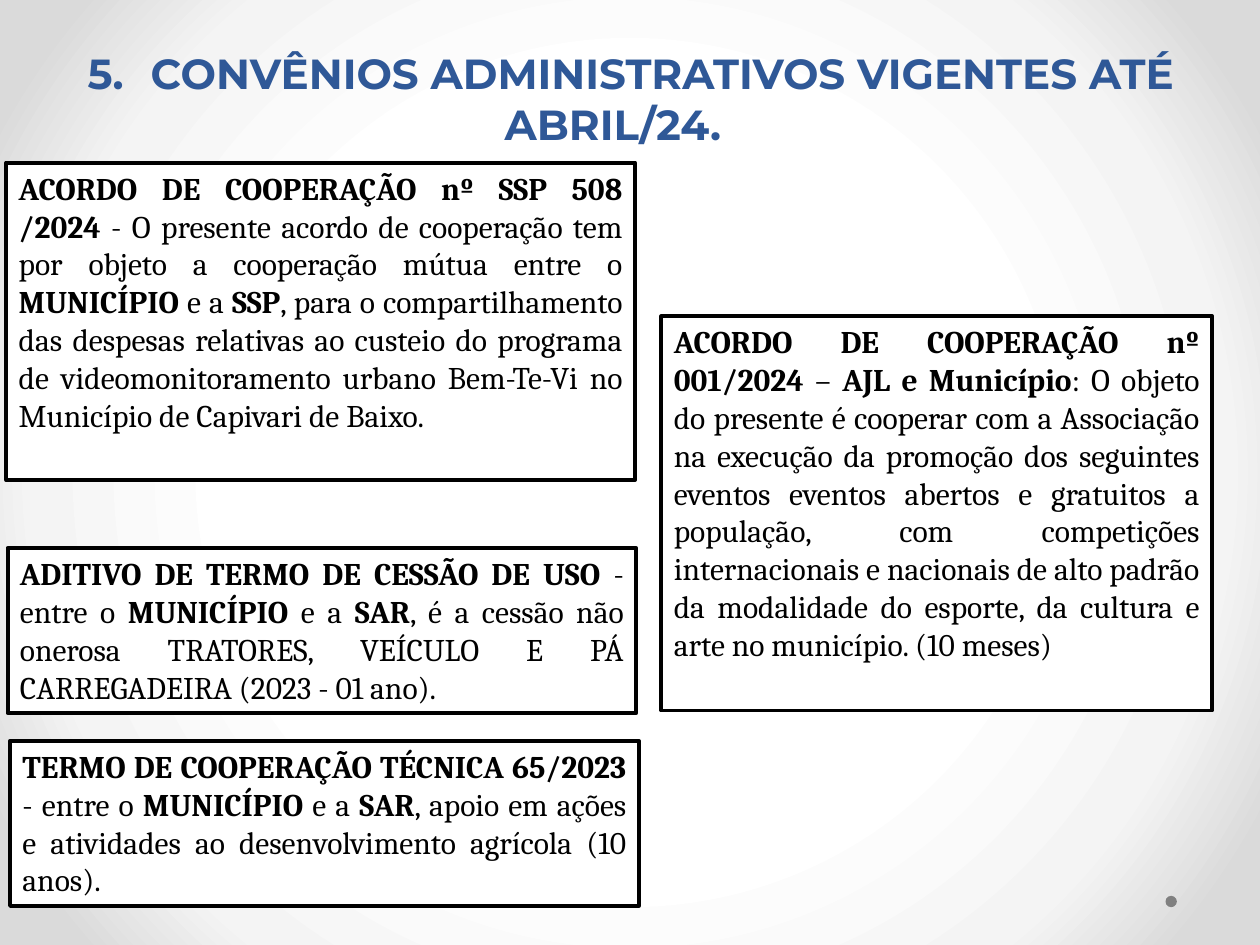
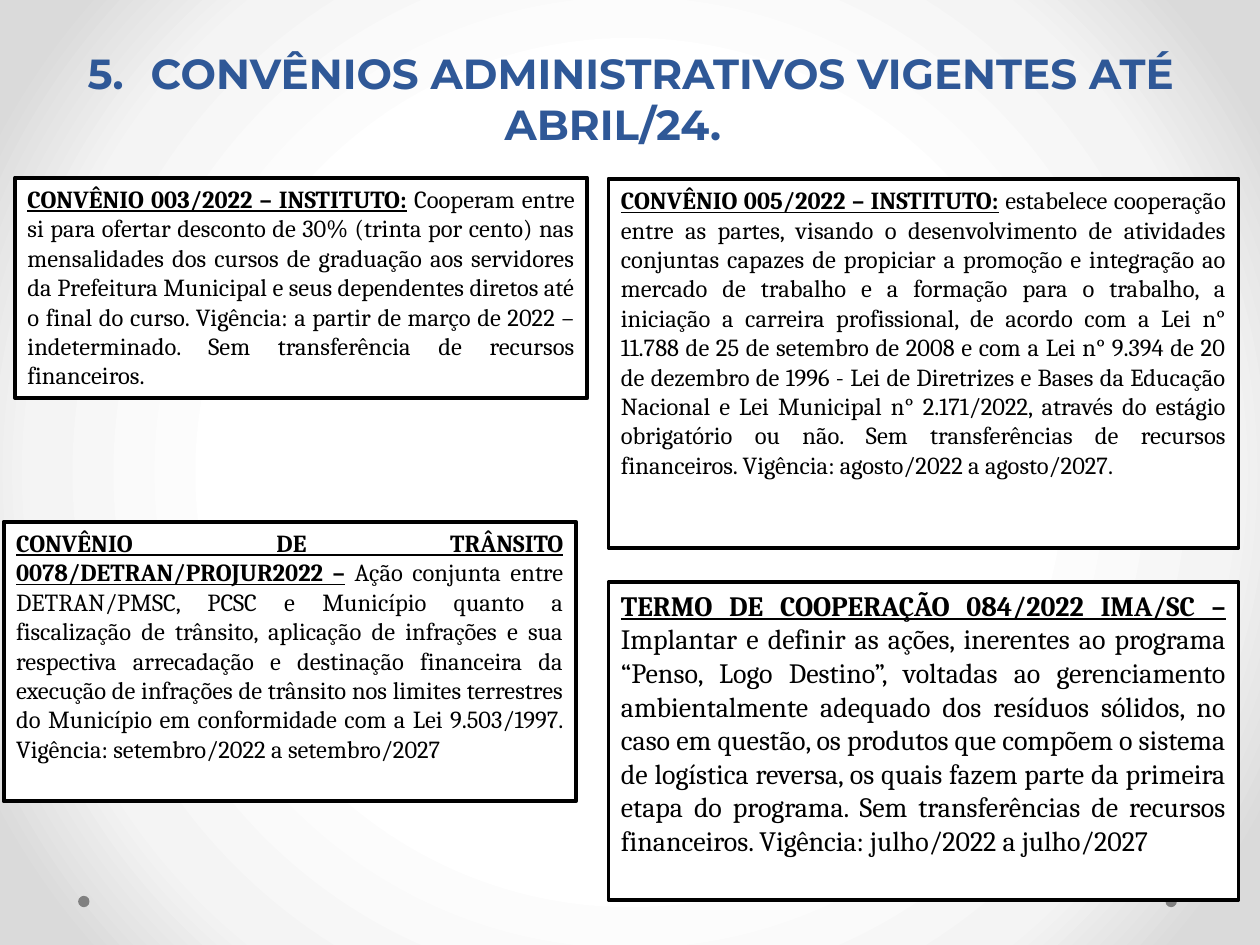
"""Build two slides listing the administrative agreements in force."""
from dataclasses import dataclass

from lxml import etree
from pptx import Presentation
from pptx.dml.color import RGBColor
from pptx.enum.shapes import MSO_SHAPE as Shape
from pptx.enum.text import MSO_ANCHOR as Anchor, PP_ALIGN as Align
from pptx.oxml import parse_xml
from pptx.oxml.ns import nsdecls, qn
from pptx.util import Pt

EMU_PER_PX = 9144
PAGE_WIDTH, PAGE_HEIGHT = 1000, 750
BLANK_LAYOUT = 6

BLACK, WHITE, TITLE_BLUE, DOT_GREY = "000000", "FFFFFF", "2F5897", "808080"
BACKDROP_STOPS = ((50, "FFFFFF"), (76, "F4F4F4"), (92, "DADADA"))
TITLE_FONT, BODY_FONT = "Montserrat", "Cambria"

TITLE = "5.\tCONVÊNIOS ADMINISTRATIVOS VIGENTES ATÉ ABRIL/24.\t"
DOT_SIZE, DOT_TOP = 9, 711
LEFT_DOT, RIGHT_DOT = 62, 925


@dataclass(frozen=True)
class Agreement:
    """A framed note whose spans alternate between bold and regular."""

    left: int
    top: int
    width: int
    height: int
    spans: tuple[str, ...]
    size: int = 18
    underlined: bool = False


@dataclass(frozen=True)
class Page:
    """The footer dots and agreements of one slide."""

    dots: tuple[int, ...]
    agreements: tuple[Agreement, ...]


PAGES = (
    Page((RIGHT_DOT,), (
        Agreement(5, 129, 499, 252, (
            "ACORDO DE COOPERAÇÃO nº SSP 508 /2024 ",
            "- O presente acordo de cooperação tem por objeto a cooperação "
            "mútua entre o ",
            "MUNICÍPIO",
            " e a ",
            "SSP",
            ", para o compartilhamento das despesas relativas ao custeio do "
            "programa de videomonitoramento urbano Bem-Te-Vi no Município de "
            "Capivari de Baixo.",
        )),
        Agreement(525, 251, 437, 313, (
            "ACORDO DE COOPERAÇÃO nº 001/2024 ",
            "– ",
            "AJL e Município",
            ": O objeto do presente é cooperar com a Associação na execução "
            "da promoção dos seguintes eventos eventos abertos e gratuitos a "
            "população, com competições internacionais e nacionais de alto "
            "padrão da modalidade do esporte, da cultura e arte no "
            "município. (10 meses)",
        )),
        Agreement(6, 435, 499, 131, (
            "ADITIVO DE TERMO DE CESSÃO DE USO ",
            "- entre o ",
            "MUNICÍPIO",
            " e a ",
            "SAR",
            ", é a cessão não onerosa TRATORES, VEÍCULO E PÁ CARREGADEIRA "
            "(2023 - 01 ano).",
        )),
        Agreement(8, 588, 499, 131, (
            "TERMO DE COOPERAÇÃO TÉCNICA 65/2023 ",
            "- entre o ",
            "MUNICÍPIO",
            " e a ",
            "SAR",
            ", apoio em ações e atividades ao desenvolvimento agrícola "
            "(10 anos).",
        )),
    )),
    Page((LEFT_DOT, RIGHT_DOT), (
        Agreement(3, 414, 454, 222, (
            "CONVÊNIO DE TRÂNSITO 0078/DETRAN/PROJUR2022 –",
            " Ação conjunta entre DETRAN/PMSC, PCSC e Município quanto a "
            "fiscalização de trânsito, aplicação de infrações e sua "
            "respectiva arrecadação e destinação financeira da execução de "
            "infrações de trânsito nos limites terrestres do Município em "
            "conformidade com a Lei 9.503/1997. Vigência: setembro/2022 a "
            "setembro/2027",
        ), 14, True),
        Agreement(12, 141, 454, 175, (
            "CONVÊNIO 003/2022 – INSTITUTO:",
            " Cooperam entre si para ofertar desconto de 30% (trinta por "
            "cento) nas mensalidades dos cursos de graduação aos servidores "
            "da Prefeitura Municipal e seus dependentes diretos até o final "
            "do curso. Vigência: a partir de março de 2022 – indeterminado. "
            "Sem transferência de recursos financeiros.",
        ), 14, True),
        Agreement(483, 142, 500, 293, (
            "CONVÊNIO 005/2022 – INSTITUTO:",
            " estabelece cooperação entre as partes, visando o "
            "desenvolvimento de atividades conjuntas capazes de propiciar a "
            "promoção e integração ao mercado de trabalho e a formação para "
            "o trabalho, a iniciação a carreira profissional, de acordo com "
            "a Lei n° 11.788 de 25 de setembro de 2008 e com a Lei n° 9.394 "
            "de 20 de dezembro de 1996 - Lei de Diretrizes e Bases da "
            "Educação Nacional e Lei Municipal n° 2.171/2022, através do "
            "estágio obrigatório ou não. Sem transferências de recursos "
            "financeiros. Vigência: agosto/2022 a agosto/2027.",
        ), 14, True),
        Agreement(483, 462, 500, 252, (
            "TERMO DE COOPERAÇÃO 084/2022 IMA/SC – ",
            "Implantar e definir as ações, inerentes ao programa “Penso, "
            "Logo Destino”, voltadas ao gerenciamento ambientalmente "
            "adequado dos resíduos sólidos, no caso em questão, os produtos "
            "que compõem o sistema de logística reversa, os quais fazem "
            "parte da primeira etapa do programa. Sem transferências de "
            "recursos financeiros. Vigência: julho/2022 a julho/2027",
        ), 16, True),
    )),
)


def px(*lengths: int) -> list[int]:
    """Turn px lengths into EMU."""
    return [length * EMU_PER_PX for length in lengths]


def colour(code: str) -> RGBColor:
    """Turn a hex string into a colour."""
    return RGBColor.from_string(code)


def paint_backdrop(master) -> None:
    """Give the slide master its radial gradient background."""
    fill = master.background.fill
    fill.solid()
    fill.fore_color.rgb = colour(WHITE)
    properties = master.element.find(".//" + qn("p:bgPr"))
    gradient = parse_xml(
        f'<a:gradFill {nsdecls("a")} rotWithShape="1"><a:gsLst/>'
        '<a:path path="circle"><a:fillToRect l="50000" t="50000" '
        'r="50000" b="50000"/></a:path></a:gradFill>'
    )
    for percent, code in BACKDROP_STOPS:
        stop = etree.SubElement(gradient[0], qn("a:gs"), pos=str(percent * 1000))
        etree.SubElement(stop, qn("a:srgbClr"), val=code)
    properties.replace(properties[0], gradient)


def add_span(para, text: str, font: str, size: int, code: str,
             bold: bool, underlined: bool = False) -> None:
    """Add one formatted run to a paragraph."""
    span = para.add_run()
    span.text = text
    span.font.name = font
    span.font.size = Pt(size)
    span.font.color.rgb = colour(code)
    span.font.bold = bold
    span.font.underline = underlined


def add_title(slide) -> None:
    """Add the shared heading."""
    frame = slide.shapes.add_textbox(*px(40, 29, 921, 94)).text_frame
    frame.word_wrap = True
    frame.vertical_anchor = Anchor.BOTTOM
    para = frame.paragraphs[0]
    para.alignment = Align.CENTER
    add_span(para, TITLE, TITLE_FONT, 24, TITLE_BLUE, True)


def add_filled(slide, kind: Shape, bounds: list[int], code: str):
    """Add a flat preset shape without an outline."""
    shape = slide.shapes.add_shape(kind, *bounds)
    shape.shadow.inherit = False
    shape.fill.solid()
    shape.fill.fore_color.rgb = colour(code)
    shape.line.fill.background()
    return shape


def add_agreement(slide, note: Agreement) -> None:
    """Draw one framed, justified agreement."""
    bounds = px(note.left, note.top, note.width, note.height)
    box = add_filled(slide, Shape.RECTANGLE, bounds, WHITE)
    box.line.color.rgb = colour(BLACK)
    box.line.width = Pt(2.25)
    frame = box.text_frame
    frame.word_wrap = True
    frame.vertical_anchor = Anchor.TOP
    para = frame.paragraphs[0]
    para.alignment = Align.JUSTIFY
    for index, text in enumerate(note.spans):
        bold = index % 2 == 0
        add_span(para, text, BODY_FONT, note.size, BLACK, bold,
                 bold and note.underlined)


def add_page(deck, page: Page) -> None:
    """Add one slide with its dots, heading and agreements."""
    slide = deck.slides.add_slide(deck.slide_layouts[BLANK_LAYOUT])
    for left in page.dots:
        add_filled(slide, Shape.OVAL, px(left, DOT_TOP, DOT_SIZE, DOT_SIZE), DOT_GREY)
    add_title(slide)
    for note in page.agreements:
        add_agreement(slide, note)


def main() -> None:
    """Build and save the deck."""
    deck = Presentation()
    deck.slide_width, deck.slide_height = px(PAGE_WIDTH, PAGE_HEIGHT)
    paint_backdrop(deck.slide_master)
    for page in PAGES:
        add_page(deck, page)
    deck.save("out.pptx")


if __name__ == "__main__":
    main()
